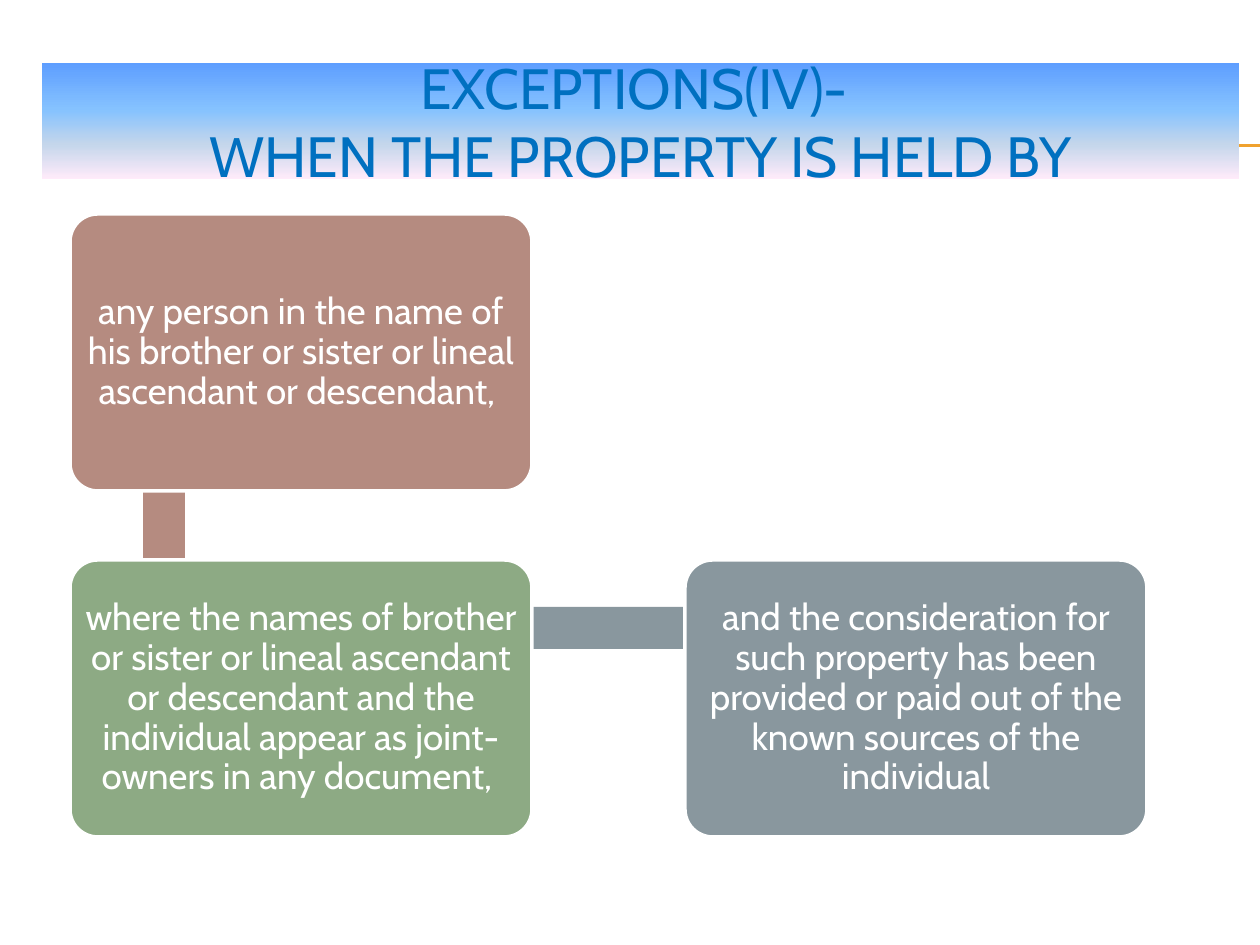
from lxml import etree
from pptx import Presentation
from pptx.dml.color import RGBColor
from pptx.enum.shapes import MSO_CONNECTOR, MSO_SHAPE
from pptx.enum.text import MSO_ANCHOR, MSO_AUTO_SIZE, PP_ALIGN
from pptx.oxml.ns import qn
from pptx.util import Emu, Pt

TITLE = ["EXCEPTIONS(IV)- ", "WHEN THE PROPERTY IS HELD BY"]
# text, colour, column, row
STEPS = [
    ("any person in the name of his brother or sister or lineal ascendant "
     "or descendant, ", "clay", 0, 0),
    ("where the names of brother or sister or lineal ascendant or descendant "
     "and the individual appear as joint-owners in any document, ", "sage", 0, 1),
    ("and the consideration for such property has been provided or paid out "
     "of the known sources of the individual", "slate", 1, 1),
]
THEME = {
    "font": "Cabin", "title_size": 32.4, "body_size": 21,
    "title": "0070C0", "white": "FFFFFF", "rule": "F0A22E",
    "clay": "B58B80", "sage": "8DAA84", "slate": "89979E",
    "banner": [(0, "5E9EFF"), (40, "85C2FF"), (70, "C4D6EB"), (100, "FFEBFA")],
}

PX = 914400 // 126
LEFT, TOP, BOX_W, BOX_H = 70, 214, 462, 277
STEP_X, STEP_Y = 615, 346
BAR, BAR_INSET_X, BAR_INSET_Y = 42, 73, 47


def px(*values):
    return [Emu(v * PX) for v in values]


def color(name):
    return RGBColor.from_string(THEME[name])


def add_run(p, text, size, name):
    r = p.add_run()
    r.text = text
    r.font.name = THEME["font"]
    r.font.size = Pt(size)
    r.font.color.rgb = color(name)


def add_shape(slide, kind, box, fill):
    s = slide.shapes.add_shape(kind, *px(*box))
    s.shadow.inherit = False
    s.fill.solid()
    s.fill.fore_color.rgb = color(fill)
    s.line.fill.background()
    return s


def add_rule(slide, y):
    c = slide.shapes.add_connector(MSO_CONNECTOR.STRAIGHT, *px(LEFT, y, 1260, y))
    c.line.color.rgb = color("rule")
    c.line.width = Pt(0.75)
    etree.SubElement(c._element.spPr, qn("a:effectLst"))


def fill_banner(s):
    """Give the shape a vertical gradient with all the banner stops."""
    s.fill.gradient()
    grad = s._element.spPr.find(qn("a:gradFill"))
    stops = grad.find(qn("a:gsLst"))
    for old in list(stops):
        stops.remove(old)
    for pos, rgb in THEME["banner"]:
        gs = etree.SubElement(stops, qn("a:gs"), pos=str(pos * 1000))
        etree.SubElement(gs, qn("a:srgbClr"), val=rgb)
    grad.find(qn("a:lin")).set("ang", str(90 * 60000))


def add_title(slide):
    s = slide.shapes.title
    s.left, s.top, s.width, s.height = px(42, 63, 1197, 116)
    fill_banner(s)
    tf = s.text_frame
    tf.auto_size = MSO_AUTO_SIZE.NONE
    tf.vertical_anchor = MSO_ANCHOR.MIDDLE
    p = tf.paragraphs[0]
    p.alignment = PP_ALIGN.CENTER
    for i, line in enumerate(TITLE):
        if i:
            p.add_line_break()
        add_run(p, line, THEME["title_size"], "title")


def add_step(slide, text, fill, col, row):
    box = (LEFT + col * STEP_X, TOP + row * STEP_Y, BOX_W, BOX_H)
    s = add_shape(slide, MSO_SHAPE.ROUNDED_RECTANGLE, box, fill)
    s.adjustments[0] = 0.1
    s.line.color.rgb = color("white")
    s.line.width = Pt(2)
    tf = s.text_frame
    tf.word_wrap = True
    tf.vertical_anchor = MSO_ANCHOR.MIDDLE
    # the rounded corners already inset the text
    tf.margin_left = tf.margin_right = tf.margin_top = tf.margin_bottom = Emu(3 * PX)
    p = tf.paragraphs[0]
    p.alignment = PP_ALIGN.CENTER
    p.line_spacing = 0.9
    add_run(p, text, THEME["body_size"], "white")


def main():
    prs = Presentation()
    prs.slide_width, prs.slide_height = px(1260, 945)
    slide = prs.slides.add_slide(prs.slide_layouts[5])
    add_title(slide)
    for y in (145, 146):
        add_rule(slide, y)
    # the title banner covers the rules
    tree = slide.shapes._spTree
    tree.append(slide.shapes.title._element)

    bar_x, bar_y = LEFT + BAR_INSET_X, TOP + BAR_INSET_Y
    for box, fill in [
        ((bar_x, bar_y, BAR, STEP_Y), "clay"),
        ((bar_x, bar_y + STEP_Y, STEP_X, BAR), "slate"),
    ]:
        add_shape(slide, MSO_SHAPE.RECTANGLE, box, fill)
    for step in STEPS:
        add_step(slide, *step)
    prs.save("out.pptx")


if __name__ == "__main__":
    main()
